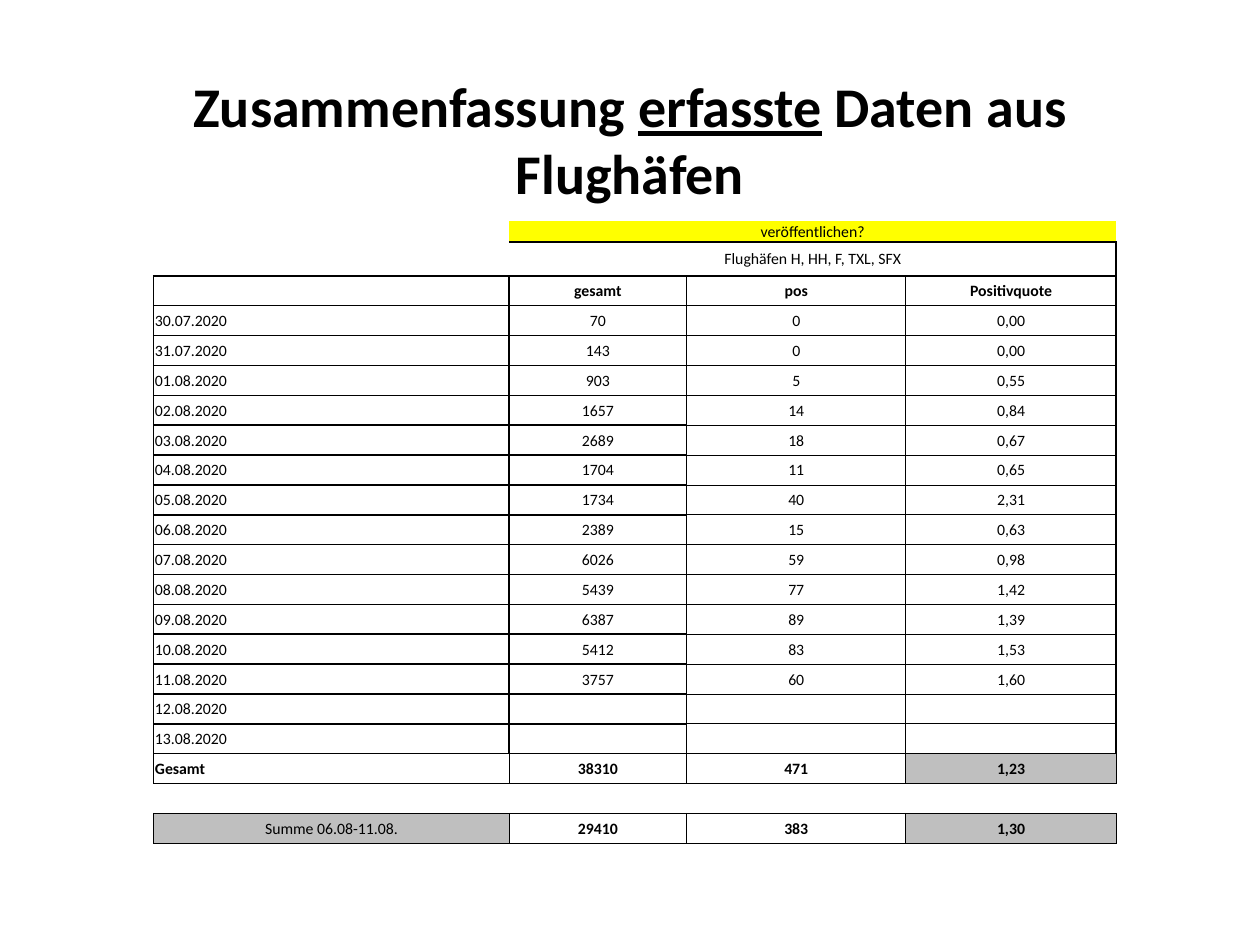
from lxml.etree import SubElement
from pptx import Presentation
from pptx.dml.color import RGBColor
from pptx.enum.text import MSO_ANCHOR, PP_ALIGN
from pptx.oxml.ns import qn
from pptx.util import Inches, Pt

COLORS = {"ink": "000000", "mark": "FFFF00", "gray": "BFBFBF"}
FONT = "Calibri"
PLAIN = "{2D5ABB26-0587-4C30-8999-92F81FD0307C}"

TITLE = [("Zusammenfassung ", False), ("erfasste", True), (" Daten aus Flughäfen", False)]
ROWS = [
    ("", "veröffentlichen?", "", ""),
    ("", "Flughäfen H, HH, F, TXL, SFX", "", ""),
    ("", "gesamt", "pos", "Positivquote"),
    ("30.07.2020", "70", "0", "0,00"),
    ("31.07.2020", "143", "0", "0,00"),
    ("01.08.2020", "903", "5", "0,55"),
    ("02.08.2020", "1657", "14", "0,84"),
    ("03.08.2020", "2689", "18", "0,67"),
    ("04.08.2020", "1704", "11", "0,65"),
    ("05.08.2020", "1734", "40", "2,31"),
    ("06.08.2020", "2389", "15", "0,63"),
    ("07.08.2020", "6026", "59", "0,98"),
    ("08.08.2020", "5439", "77", "1,42"),
    ("09.08.2020", "6387", "89", "1,39"),
    ("10.08.2020", "5412", "83", "1,53"),
    ("11.08.2020", "3757", "60", "1,60"),
    ("12.08.2020", "", "", ""),
    ("13.08.2020", "", "", ""),
    ("Gesamt", "38310", "471", "1,23"),
    ("", "", "", ""),
    ("Summe 06.08-11.08.", "29410", "383", "1,30"),
]
WIDTHS = [2.82, 1.41, 1.74, 1.67]
TOPS = [0.17, 0.27]
HEIGHT = 4.95
HEAD, TOTAL, GAP, SUM = 2, 18, 19, 20
FILLS = {(0, 1): "mark", (TOTAL, 3): "gray", (SUM, 0): "gray", (SUM, 3): "gray"}


def style(font, size, bold):
    font.name, font.size, font.bold = FONT, Pt(size), bold
    font.color.rgb = RGBColor.from_string(COLORS["ink"])


def edges(row, col):
    """Line widths in points: left, right, top, bottom."""
    if row < HEAD:
        top = 1 if row and col else 0
        right = 1 if row and col in (1, 3) else 0
        return 0, right, top, 1 if row or col else 0
    if row == GAP:
        return 0, 0, 0.5, 0.5
    if row >= TOTAL:
        return 0.5, 0.5, 1 if row == TOTAL and col < 2 else 0.5, 0.5
    if col < 2:
        return 1, 1, 1, 1
    top = 1 if row == HEAD else 0.5
    return (1, 0.5, top, 0.5) if col == 2 else (0.5, 1, top, 0.5)


def border(cell, sides):
    props = cell._tc.get_or_add_tcPr()
    for spot, (side, width) in enumerate(zip("LRTB", sides)):
        line = SubElement(props, qn("a:ln" + side))
        props.insert(spot, line)
        if width:
            line.set("w", str(Pt(width)))
            fill = SubElement(line, qn("a:solidFill"))
            SubElement(fill, qn("a:srgbClr")).set("val", COLORS["ink"])
        else:
            line.set("w", "0")
            SubElement(line, qn("a:noFill"))


def write(cell, text, row, col):
    cell.margin_left = cell.margin_right = cell.margin_top = Inches(0.01)
    cell.margin_bottom = 0
    cell.vertical_anchor = MSO_ANCHOR.MIDDLE
    cell.text_frame.text = text
    para = cell.text_frame.paragraphs[0]
    para.alignment = PP_ALIGN.CENTER if col or row == SUM else PP_ALIGN.LEFT
    bold = row in (HEAD, TOTAL) or (row == SUM and col > 0)
    for run in para.runs:
        style(run.font, 9, bold)
    if not text:
        SubElement(para._p, qn("a:endParaRPr")).set("sz", "900")
    if (row, col) in FILLS:
        cell.fill.solid()
        cell.fill.fore_color.rgb = RGBColor.from_string(COLORS[FILLS[row, col]])
    else:
        cell.fill.background()
    border(cell, edges(row, col))


def main():
    deck = Presentation()
    deck.slide_width, deck.slide_height = Inches(10), Inches(7.5)
    slide = deck.slides.add_slide(deck.slide_layouts[6])

    frame = slide.shapes.add_table(len(ROWS), len(WIDTHS), Inches(1.22), Inches(1.75),
                                   Inches(sum(WIDTHS)), Inches(HEIGHT))
    table = frame.table
    table.first_row = table.horz_banding = False
    table._tbl.tblPr.find(qn("a:tableStyleId")).text = PLAIN
    for column, width in zip(table.columns, WIDTHS):
        column.width = Inches(width)
    rest = (HEIGHT - sum(TOPS)) / (len(ROWS) - len(TOPS))
    for row, texts in enumerate(ROWS):
        table.rows[row].height = Inches(TOPS[row] if row < len(TOPS) else rest)
        for col, text in enumerate(texts):
            write(table.cell(row, col), text, row, col)
    for row in range(HEAD):
        table.cell(row, 1).merge(table.cell(row, 3))

    box = slide.shapes.add_textbox(Inches(1.14), Inches(0.52), Inches(7.72), Inches(1.18))
    box.text_frame.word_wrap = True
    para = box.text_frame.paragraphs[0]
    para.alignment = PP_ALIGN.CENTER
    for text, under in TITLE:
        run = para.add_run()
        run.text = text
        style(run.font, 32, True)
        run.font.underline = under
    deck.save("out.pptx")


if __name__ == "__main__":
    main()
